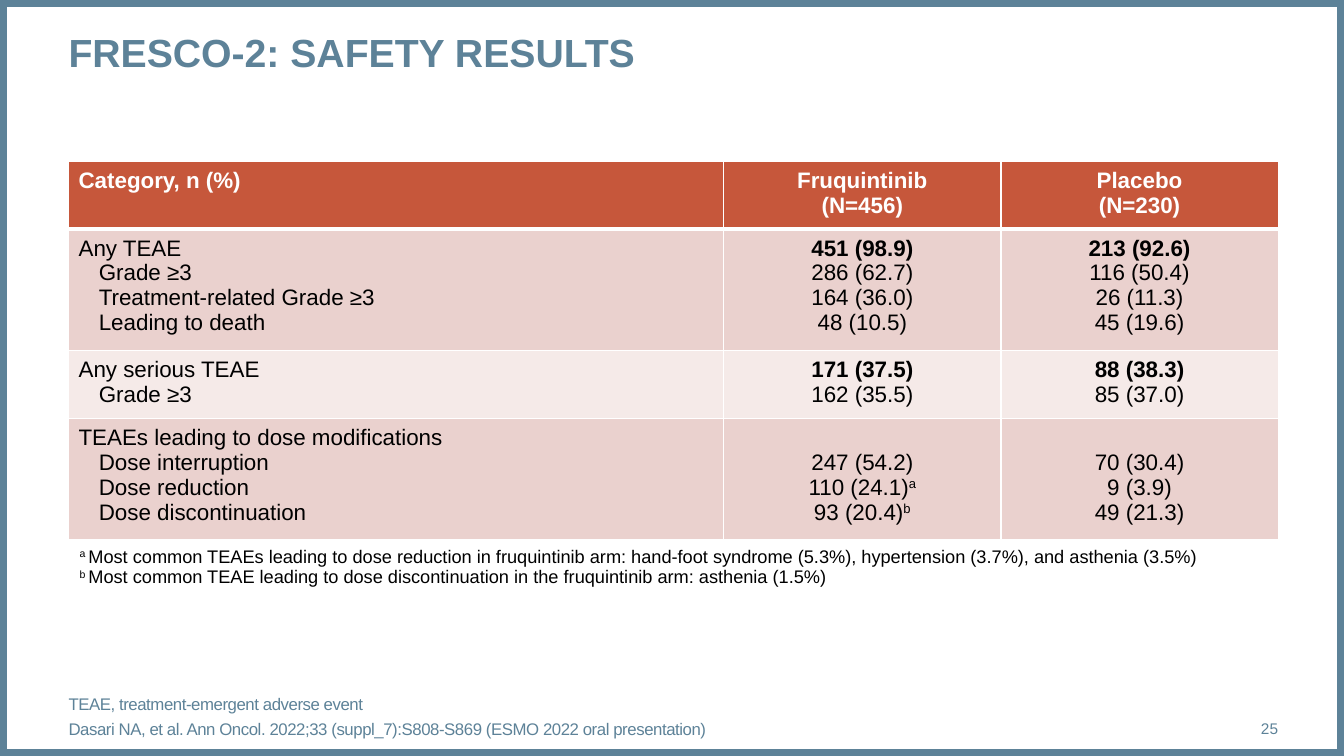
from dataclasses import dataclass
from typing import Optional

from lxml.etree import SubElement
from pptx import Presentation
from pptx.dml.color import RGBColor
from pptx.enum.shapes import MSO_SHAPE
from pptx.enum.text import MSO_ANCHOR, PP_ALIGN
from pptx.oxml.ns import qn
from pptx.util import Inches, Pt

SLATE = RGBColor(0x5D, 0x82, 0x98)
RUST = RGBColor(0xC6, 0x57, 0x3B)
ROSE = RGBColor(0xEA, 0xD1, 0xCE)
BLUSH = RGBColor(0xF5, 0xEA, 0xE8)
WHITE = RGBColor(0xFF, 0xFF, 0xFF)
BLACK = RGBColor(0, 0, 0)

WIDTH, HEIGHT = Inches(13.33), Inches(7.5)
LEFT, SPAN = 0.051, 0.9
COLUMN_WEIGHTS = (26, 11, 11)


@dataclass(frozen=True)
class Style:
    size: float
    color: RGBColor
    bold: bool = False
    align: PP_ALIGN = PP_ALIGN.LEFT
    space_before: float = 0
    tracking: int = 0


@dataclass(frozen=True)
class Area:
    left: float
    top: float
    width: float
    height: float

    def box(self) -> tuple[int, int, int, int]:
        return (int(WIDTH * self.left), int(HEIGHT * self.top),
                int(WIDTH * self.width), int(HEIGHT * self.height))


@dataclass(frozen=True)
class Label:
    area: Area
    lines: tuple[str, ...]
    style: Style
    anchor: MSO_ANCHOR = MSO_ANCHOR.MIDDLE


@dataclass(frozen=True)
class Group:
    height: float
    fill: RGBColor
    categories: tuple[str, ...]
    fruquintinib: tuple[str, ...]
    placebo: tuple[str, ...]
    bold_lead: bool = True


LABELS = (
    Label(Area(LEFT, 0.037, SPAN, 0.125), ("FRESCO-2: SAFETY RESULTS",),
          Style(28, SLATE, bold=True), MSO_ANCHOR.TOP),
    Label(Area(0.886, 0.937, 0.065, 0.053), ("25",), Style(11, SLATE, align=PP_ALIGN.RIGHT)),
    Label(Area(LEFT, 0.921, 0.835, 0.053),
          ("TEAE, treatment-emergent adverse event",
           "Dasari NA, et al. Ann Oncol. 2022;33 (suppl_7):S808-S869 (ESMO 2022 oral presentation)"),
          Style(12, SLATE, space_before=3, tracking=-30)),
)

HEADINGS = (("Category, n (%)",), ("Fruquintinib", "(N=456)"), ("Placebo", "(N=230)"))
HEADING_HEIGHT, FOOTNOTE_HEIGHT = 0.083, 0.109
GROUPS = (
    Group(0.151, ROSE,
          ("Any TEAE", "Grade ≥3", "Treatment-related Grade ≥3", "Leading to death"),
          ("451 (98.9)", "286 (62.7)", "164 (36.0)", "48 (10.5)"),
          ("213 (92.6)", "116 (50.4)", "26 (11.3)", "45 (19.6)")),
    Group(0.086, BLUSH,
          ("Any serious TEAE", "Grade ≥3"),
          ("171 (37.5)", "162 (35.5)"),
          ("88 (38.3)", "85 (37.0)")),
    Group(0.15, ROSE,
          ("TEAEs leading to dose modifications", "Dose interruption",
           "Dose reduction", "Dose discontinuation"),
          ("", "247 (54.2)", "110 (24.1)^a", "93 (20.4)^b"),
          ("", "70 (30.4)", "9 (3.9)", "49 (21.3)"), bold_lead=False),
)
FOOTNOTES = (
    ("a ", "Most common TEAEs leading to dose reduction in fruquintinib arm: "
           "hand-foot syndrome (5.3%), hypertension (3.7%), and asthenia (3.5%)"),
    ("b ", "Most common TEAE leading to dose discontinuation in the fruquintinib arm: "
           "asthenia (1.5%)"),
)

HEADING = Style(16, WHITE, bold=True)
CATEGORY = Style(16, BLACK)
FOOTNOTE = Style(13, BLACK)


def set_style(paragraph, style: Style) -> None:
    paragraph.alignment = style.align
    paragraph.space_before = Pt(style.space_before)
    paragraph.font.name = "Arial"
    paragraph.font.size = Pt(style.size)
    paragraph.font.bold = style.bold
    paragraph.font.color.rgb = style.color


def add_run(paragraph, text: str, bold: Optional[bool] = None,
            raised: bool = False, tracking: int = 0) -> None:
    if not text:
        return
    run = paragraph.add_run()
    run.text = text
    run.font.bold = bold
    properties = run.font._element
    if raised:
        properties.set("baseline", "30000")
    if tracking:
        properties.set("spc", str(tracking))


def new_paragraph(frame, index: int, style: Style, indent: float = 0):
    paragraph = frame.add_paragraph() if index else frame.paragraphs[0]
    set_style(paragraph, style)
    if indent:
        properties = paragraph._p.get_or_add_pPr()
        properties.set("marL", "0")
        properties.set("indent", str(Inches(indent)))
    return paragraph


def add_label(slide, label: Label) -> None:
    frame = slide.shapes.add_textbox(*label.area.box()).text_frame
    frame.word_wrap = True
    frame.vertical_anchor = label.anchor
    frame.margin_left = frame.margin_right = frame.margin_top = frame.margin_bottom = 0
    for index, line in enumerate(label.lines):
        paragraph = new_paragraph(frame, index, label.style)
        add_run(paragraph, line, tracking=label.style.tracking)


def prepare_cell(cell, fill: Optional[RGBColor], bottom: float = 1) -> None:
    cell.margin_left = cell.margin_right = Inches(0.1)
    cell.margin_top = cell.margin_bottom = Inches(0.07)
    properties = cell._tc.get_or_add_tcPr()
    for side, width in (("L", 1), ("R", 1), ("T", 1), ("B", bottom)):
        border = SubElement(properties, qn(f"a:ln{side}"), w=str(Pt(width)))
        paint = SubElement(border, qn("a:solidFill"))
        SubElement(paint, qn("a:srgbClr"), val=str(WHITE))
    if fill is None:
        cell.fill.background()
    else:
        cell.fill.solid()
        cell.fill.fore_color.rgb = fill


def write_stack(cell, lines: tuple[str, ...], style: Style, bold_lead: bool = False) -> None:
    paragraph = new_paragraph(cell.text_frame, 0, style)
    for index, line in enumerate(lines):
        if index:
            paragraph.add_line_break()
        value, _, mark = line.partition("^")
        add_run(paragraph, value, bold=True if bold_lead and index == 0 else None)
        add_run(paragraph, mark, raised=True)


def add_safety_table(slide) -> None:
    heights = (HEADING_HEIGHT, *(group.height for group in GROUPS), FOOTNOTE_HEIGHT)
    area = Area(LEFT, 0.213, SPAN, sum(heights))
    table = slide.shapes.add_table(len(heights), len(COLUMN_WEIGHTS), *area.box()).table
    table.horz_banding = False
    for column, weight in zip(table.columns, COLUMN_WEIGHTS):
        column.width = int(WIDTH * SPAN * weight / sum(COLUMN_WEIGHTS))
    for row, height in zip(table.rows, heights):
        row.height = int(HEIGHT * height)

    for column, lines in enumerate(HEADINGS):
        align = PP_ALIGN.CENTER if column else PP_ALIGN.LEFT
        prepare_cell(table.cell(0, column), RUST, bottom=3)
        write_stack(table.cell(0, column), lines, Style(16, WHITE, bold=True, align=align))

    for row, group in enumerate(GROUPS, start=1):
        for column in range(len(COLUMN_WEIGHTS)):
            prepare_cell(table.cell(row, column), group.fill)
        for index, category in enumerate(group.categories):
            frame = table.cell(row, 0).text_frame
            add_run(new_paragraph(frame, index, CATEGORY, 0.2 if index else 0), category)
        for column, values in enumerate((group.fruquintinib, group.placebo), start=1):
            write_stack(table.cell(row, column), values,
                        Style(16, BLACK, align=PP_ALIGN.CENTER), group.bold_lead)

    last = len(heights) - 1
    notes = table.cell(last, 0)
    notes.merge(table.cell(last, len(COLUMN_WEIGHTS) - 1))
    prepare_cell(notes, None)
    for index, (mark, note) in enumerate(FOOTNOTES):
        paragraph = new_paragraph(notes.text_frame, index, FOOTNOTE, 0.01)
        add_run(paragraph, mark, raised=True)
        add_run(paragraph, note)


def main() -> None:
    deck = Presentation()
    deck.slide_width, deck.slide_height = WIDTH, HEIGHT
    slide = deck.slides.add_slide(deck.slide_layouts[6])
    frame = slide.shapes.add_shape(MSO_SHAPE.RECTANGLE, *Area(0, 0, 1, 1).box())
    frame.shadow.inherit = False
    frame.fill.background()
    frame.line.color.rgb = SLATE
    frame.line.width = Pt(10)
    for label in LABELS:
        add_label(slide, label)
    add_safety_table(slide)
    deck.save("out.pptx")


if __name__ == "__main__":
    main()
